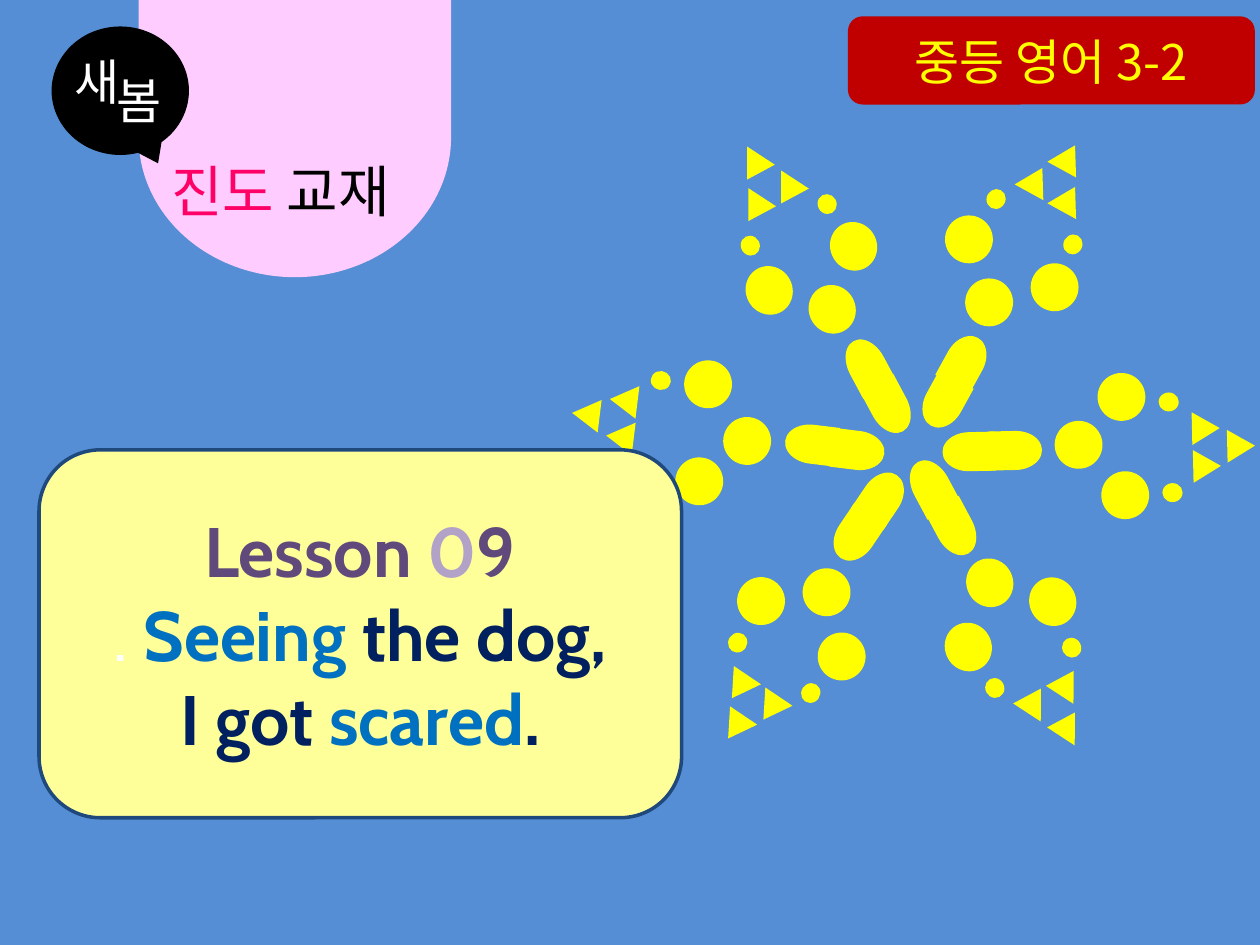
from dataclasses import dataclass

from lxml import etree
from pptx import Presentation
from pptx.dml.color import RGBColor
from pptx.enum.shapes import MSO_SHAPE
from pptx.enum.text import MSO_ANCHOR, PP_ALIGN
from pptx.oxml.ns import qn
from pptx.util import Inches, Pt

TRIANGLE = MSO_SHAPE.ISOSCELES_TRIANGLE
OVAL = MSO_SHAPE.OVAL
DELAY = MSO_SHAPE.FLOWCHART_DELAY
BADGE = MSO_SHAPE.FLOWCHART_ALTERNATE_PROCESS
ROUNDED = MSO_SHAPE.ROUNDED_RECTANGLE
CALLOUT = MSO_SHAPE.OVAL_CALLOUT
CENTER, LEFT = PP_ALIGN.CENTER, PP_ALIGN.LEFT
MIDDLE, TOP = MSO_ANCHOR.MIDDLE, MSO_ANCHOR.TOP


@dataclass(frozen=True)
class Theme:
    sky: str = "558ED5"
    yellow: str = "FFFF00"
    red: str = "C00000"
    cream: str = "FFFF99"
    outline: str = "1F497D"
    pink: str = "FFCCFF"
    rose: str = "FF0066"
    black: str = "000000"
    white: str = "FFFFFF"
    purple: str = "604A7B"
    lilac: str = "B3A2C7"
    blue: str = "0070C0"
    navy: str = "002060"
    latin: str = "Cabin"
    korean: str = "Noto Sans CJK KR"
    label: int = 28
    heading: int = 32
    title: int = 40


THEME = Theme()

SLIM = {"triangles": (0.25, 0.23), "dots": (0.15, 0.16), "discs": (0.37, 0.39), "petal": (0.44, 0.3)}
WIDE = {"triangles": (0.26, 0.22), "dots": (0.15, 0.16), "discs": (0.38, 0.38), "petal": (0.42, 0.31)}
PART_KINDS = {
    "triangles": (TRIANGLE, (0, 0, 0)),
    "dots": (OVAL, (0, 0)),
    "petal": (DELAY, (90, 270)),
    "discs": (OVAL, (0, 0, 0)),
}

ARMS = [
    (331.8, SLIM, {
        "triangles": [(5.86, 1.15), (6.13, 1.34), (5.87, 1.48)],
        "dots": [(5.88, 1.87), (6.49, 1.54)],
        "petal": [(6.84, 3.08), (6.66, 2.75)],
        "discs": [(5.92, 2.11), (6.59, 1.76), (6.42, 2.26)],
    }),
    (151.8, SLIM, {
        "triangles": [(8.35, 5.7), (8.08, 5.51), (8.34, 5.37)],
        "dots": [(8.43, 5.06), (7.82, 5.38)],
        "petal": [(7.17, 3.71), (7.36, 4.05)],
        "discs": [(8.17, 4.58), (7.5, 4.94), (7.67, 4.43)],
    }),
    (214, WIDE, {
        "triangles": [(5.71, 5.66), (5.74, 5.34), (5.99, 5.51)],
        "dots": [(6.36, 5.42), (5.78, 5.02)],
        "petal": [(6.79, 3.79), (6.58, 4.1)],
        "discs": [(6.49, 5.02), (5.85, 4.58), (6.37, 4.51)],
    }),
    (277, WIDE, {
        "triangles": [(4.52, 3.18), (4.82, 3.07), (4.79, 3.36)],
        "dots": [(5.17, 2.94)],
        "petal": [(6.6, 3.42), (6.23, 3.37)],
        "discs": [(5.36, 3.63), (5.43, 2.86), (5.74, 3.31)],
    }),
    (28.8, WIDE, {
        "triangles": [(8.35, 1.14), (8.35, 1.47), (8.09, 1.32)],
        "dots": [(7.83, 1.5), (8.44, 1.86)],
        "petal": [(7.28, 3.04), (7.45, 2.71)],
        "discs": [(7.5, 1.71), (8.18, 2.09), (7.66, 2.21)],
    }),
    (88.7, WIDE, {
        "triangles": [(9.72, 3.43), (9.45, 3.59), (9.44, 3.29)],
        "dots": [(9.2, 3.11), (9.23, 3.83)],
        "petal": [(7.48, 3.43), (7.85, 3.42)],
        "discs": [(8.71, 2.96), (8.74, 3.74), (8.37, 3.34)],
    }),
]

COURSE = [[("중등 영어 3-2", THEME.yellow, False)]]
LESSON = [
    [("Lesson ", THEME.purple, True), ("0", THEME.lilac, True), ("9", THEME.purple, True)],
    [(". ", THEME.white, False), ("Seeing", THEME.blue, True), (" the dog,", THEME.navy, True)],
    [("I got ", THEME.navy, True), ("scared", THEME.blue, True), (".", THEME.navy, True)],
]
TAB_LABELS = [
    ((0.49, 0.36, 0.79, 0.57), [[("새", THEME.white, False)]], THEME.label, THEME.korean),
    ((0.83, 0.51, 0.6, 0.57), [[("봄", THEME.white, False)]], THEME.label, THEME.korean),
    ((1.26, 1.19, 2.32, 1.18),
     [[("진도 ", THEME.rose, False), ("교재", THEME.black, False)]], THEME.heading, THEME.latin),
]


def color(value):
    return RGBColor.from_string(value)


def add_box(shapes, kind, frame, fill, rotation=0, outline=None):
    box = shapes.add_shape(kind, *map(Inches, frame))
    box.rotation = rotation % 360
    box.shadow.inherit = False
    box.fill.solid()
    box.fill.fore_color.rgb = color(fill)
    if outline:
        box.line.color.rgb = color(outline)
        box.line.width = Pt(2)
    else:
        box.line.fill.background()
    return box


def write(box, lines, size, font, align, anchor):
    frame = box.text_frame
    frame.word_wrap = True
    frame.vertical_anchor = anchor
    for index, line in enumerate(lines):
        para = frame.add_paragraph() if index else frame.paragraphs[0]
        para.alignment = align
        para.font.size = Pt(size)
        para.font.name = font
        for text, tint, bold in line:
            span = para.add_run()
            span.text = text
            span.font.color.rgb = color(tint)
            span.font.bold = bold
            properties = span.font._element if hasattr(span.font, "_element") else span._r.get_or_add_rPr()
            etree.SubElement(properties, qn("a:ea"), typeface=THEME.korean)


def draw_snowflake(slide):
    for angle, sizes, places in ARMS:
        arm = slide.shapes.add_group_shape()
        for part, (kind, turns) in PART_KINDS.items():
            for place, turn in zip(places[part], turns):
                add_box(arm.shapes, kind, place + sizes[part], THEME.yellow, angle + turn)


def draw_tab(slide):
    tab = slide.shapes.add_group_shape()
    add_box(tab.shapes, DELAY, (1.23, -0.15, 2.22, 2.48), THEME.pink, 90)
    bubble = add_box(tab.shapes, CALLOUT, (0.41, 0.21, 1.09, 1.02), THEME.black)
    bubble.adjustments[0] = 0.275
    bubble.adjustments[1] = 0.565
    for frame, lines, size, font in TAB_LABELS:
        label = tab.shapes.add_textbox(*map(Inches, frame))
        write(label, lines, size, font, LEFT, TOP)


def main():
    deck = Presentation()
    deck.slide_width, deck.slide_height = Inches(10), Inches(7.5)
    slide = deck.slides.add_slide(deck.slide_layouts[6])
    slide.background.fill.solid()
    slide.background.fill.fore_color.rgb = color(THEME.sky)
    draw_snowflake(slide)
    badge = add_box(slide.shapes, BADGE, (6.73, 0.13, 3.23, 0.7), THEME.red)
    write(badge, COURSE, THEME.label, THEME.korean, CENTER, MIDDLE)
    card = add_box(slide.shapes, ROUNDED, (0.31, 3.57, 5.1, 2.92), THEME.cream, outline=THEME.outline)
    write(card, LESSON, THEME.title, THEME.latin, CENTER, MIDDLE)
    draw_tab(slide)
    deck.save("out.pptx")


if __name__ == "__main__":
    main()
